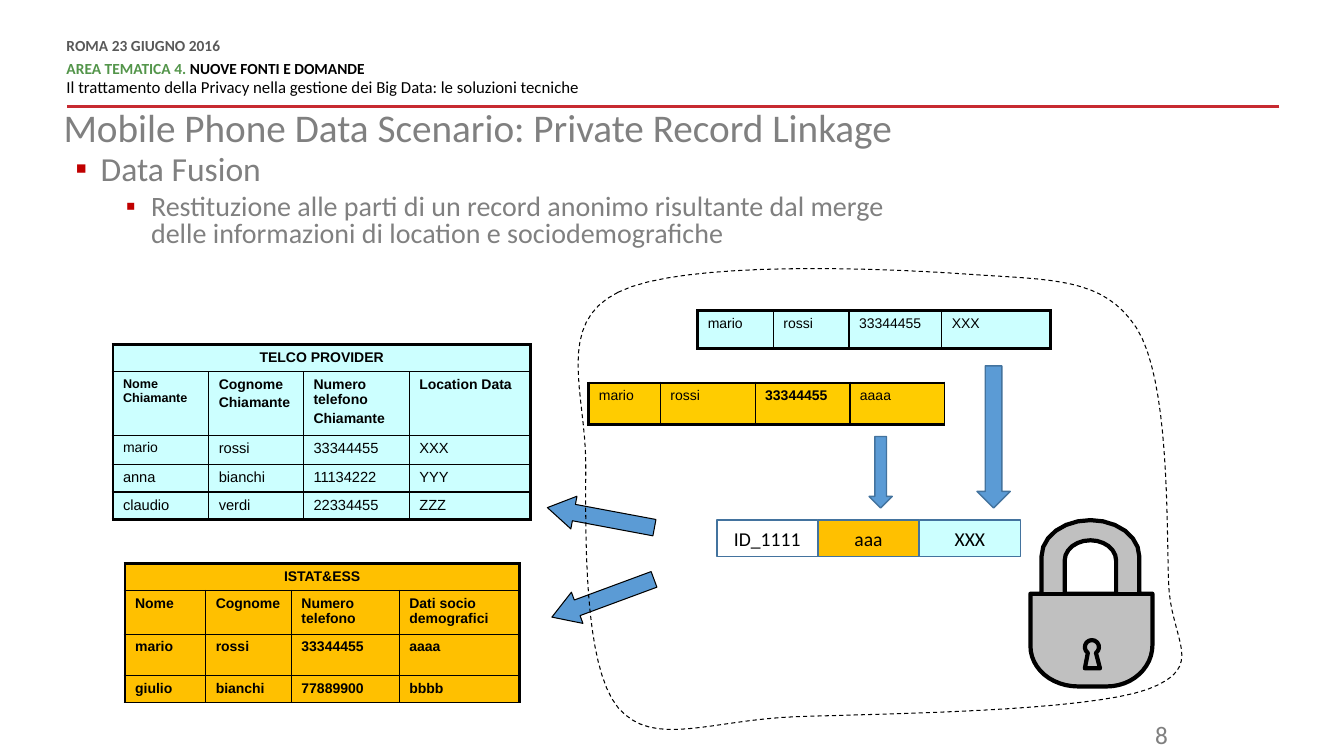
import math

from lxml import etree
from pptx import Presentation, util as u
from pptx.dml.color import RGBColor
from pptx.enum import dml, shapes, text
from pptx.oxml import ns

BLACK = RGBColor(0x00, 0x00, 0x00)
WHITE = RGBColor(0xFF, 0xFF, 0xFF)
DARK = RGBColor(0x59, 0x59, 0x59)
GREY = RGBColor(0x80, 0x80, 0x80)
PALE = RGBColor(0x7F, 0x7F, 0x7F)
STEEL = RGBColor(0xC0, 0xC0, 0xC0)
RED = RGBColor(0xC7, 0x2A, 0x31)
GREEN = RGBColor(0x53, 0x95, 0x4A)
BLUE = RGBColor(0x5B, 0x9B, 0xD5)
NAVY = RGBColor(0x43, 0x73, 0x9E)
CYAN = RGBColor(0xCC, 0xFF, 0xFF)
GOLD = RGBColor(0xFF, 0xC0, 0x00)
AMBER = RGBColor(0xFF, 0xCC, 0x00)
THICK, THIN = 2.25, 1
KIND = shapes.MSO_SHAPE


def grid(*vals):
    """Turn columns or rows, each a tenth of an inch, into lengths."""
    return [u.Inches(v / 10) for v in vals]


def write(par, words, size=10, color=BLACK, bold=False, font="Calibri",
          align=None, line=None, before=None, after=None):
    run = par.add_run()
    run.text = words
    run.font.name, run.font.size, run.font.bold = font, u.Pt(size), bold
    run.font.color.rgb = color
    for key, val in (("alignment", align), ("line_spacing", line),
                     ("space_before", before), ("space_after", after)):
        if val is not None:
            setattr(par, key, val)


def add_node(top, tag, **attrs):
    return etree.SubElement(top, ns.qn(tag), attrs)


def arc(mid, rad, start, stop, steps=12):
    """Points on an ellipse, angles in degrees, clockwise from the right."""
    turns = [math.radians(start + (stop - start) * i / steps) for i in range(steps + 1)]
    return [(mid[0] + rad[0] * math.cos(t), mid[1] + rad[1] * math.sin(t)) for t in turns]


def bezier(start, curves, steps=16):
    """Points along a chain of cubic curves."""
    pts = [start]
    for a, b, end in curves:
        first = pts[-1]
        for i in range(1, steps + 1):
            t = i / steps
            s = 1 - t
            pts.append(tuple(s**3 * p + 3 * s * s * t * q + 3 * s * t * t * r + t**3 * e
                             for p, q, r, e in zip(first, a, b, end)))
    return pts


class Board:
    """The current slide and its style."""

    def __init__(self, deck):
        self.slide = deck.slides.add_slide(deck.slide_layouts[5])
        self.items = self.slide.shapes

    def title(self, area, words):
        item = self.items.title
        item.left, item.top, item.width, item.height = grid(*area)
        frame = item.text_frame
        frame.auto_size = text.MSO_AUTO_SIZE.NONE
        frame.vertical_anchor = text.MSO_ANCHOR.TOP
        write(frame.paragraphs[0], words, size=28, color=GREY,
              align=text.PP_ALIGN.LEFT, line=0.9)

    def box(self, area, inset=None):
        frame = self.items.add_textbox(*grid(*area)).text_frame
        frame.word_wrap = True
        if inset is not None:
            frame.margin_left = frame.margin_right = inset
            frame.margin_top = frame.margin_bottom = inset
        return frame

    def bullet(self, par, words, left, **fmt):
        props = par._p.get_or_add_pPr()
        props.set("marL", str(u.Inches(left)))
        props.set("indent", str(u.Inches(-0.25)))
        add_node(add_node(props, "a:buClr"), "a:srgbClr", val="C00000")
        add_node(props, "a:buFont", typeface="Arial")
        add_node(props, "a:buChar", char="▪")
        write(par, words, color=GREY, line=0.8, **fmt)

    def paint(self, item, fill, line, width):
        item.shadow.inherit = False
        if fill is None:
            item.fill.background()
        else:
            item.fill.solid()
            item.fill.fore_color.rgb = fill
        item.line.color.rgb = line
        item.line.width = u.Pt(width)
        return item

    def shape(self, kind, area, fill=BLUE, line=NAVY, width=1, turn=0, words=None):
        item = self.paint(self.items.add_shape(kind, *grid(*area)), fill, line, width)
        item.rotation = turn
        if words:
            item.text_frame.vertical_anchor = text.MSO_ANCHOR.MIDDLE
            write(item.text_frame.paragraphs[0], words, size=14,
                  align=text.PP_ALIGN.CENTER)
        return item

    def outline(self, paths, fill=None, width=0.75):
        build = self.items.build_freeform(*grid(*paths[0][0]))
        for i, pts in enumerate(paths):
            if i:
                build.move_to(*grid(*pts[0]))
            build.add_line_segments([grid(*p) for p in pts[1:]], close=True)
        return self.paint(build.convert_to_shape(), fill, BLACK, width)

    def rule(self, ends, color, width):
        item = self.items.add_connector(shapes.MSO_CONNECTOR.STRAIGHT, *grid(*ends))
        item.line.color.rgb, item.line.width = color, u.Pt(width)
        add_node(item._element.spPr, "a:effectLst")

    def table(self, spot, cols, rows, fill, head=None, right=THICK, foot=THICK):
        """Rows hold a height, a format and cells; a cell may add its own format."""
        if head:
            top = dict(bold=True, align=text.PP_ALIGN.CENTER)
            rows = [(2.5, top, [head] + [""] * (len(cols) - 1))] + rows
        area = (*spot, sum(cols), sum(r[0] for r in rows))
        table = self.items.add_table(len(rows), len(cols), *grid(*area)).table
        table.first_row = table.horz_banding = False
        for col, wide in zip(table.columns, grid(*cols)):
            col.width = wide
        last, low = len(cols) - 1, len(rows) - 1
        for r, (high, fmt, cells) in enumerate(rows):
            table.rows[r].height = grid(high)[0]
            for c, words in enumerate(cells):
                cell = table.cell(r, c)
                wide = head and r == 0
                self.edges(cell, lnL=THIN if c else THICK,
                           lnR=right if c == last or wide else THIN,
                           lnT=THIN if r else THICK, lnB=foot if r == low else THIN)
                cell.fill.solid()
                cell.fill.fore_color.rgb = fill
                words, own = words if isinstance(words, tuple) else (words, {})
                frame = cell.text_frame
                for i, part in enumerate(words.split("\n") if words else []):
                    par = frame.add_paragraph() if i else frame.paragraphs[0]
                    write(par, part, font="Arial", before=u.Pt(2) if i else None,
                          **{**fmt, **own})
        if head:
            table.cell(0, 0).merge(table.cell(0, last))

    def edges(self, cell, **sides):
        props = cell._tc.get_or_add_tcPr()
        for side, width in sides.items():
            edge = add_node(props, "a:" + side, w=str(u.Pt(width)))
            add_node(add_node(edge, "a:solidFill"), "a:srgbClr", val=str(BLACK))


def main():
    deck = Presentation()
    deck.slide_width, deck.slide_height = u.Inches(13.33), u.Inches(7.5)
    board = Board(deck)

    # Header, title and page number
    board.rule((126.9, 10.6, 6.6, 10.6), RED, 2)
    frame = board.box((6.6, 3.9, 83.4, 5.9), inset=0)
    tight = u.Pt(10.8)
    write(frame.paragraphs[0], "ROMA 23 GIUGNO 2016", size=11, color=DARK, bold=True,
          line=tight, after=u.Pt(6))
    area = frame.add_paragraph()
    write(area, "AREA TEMATICA 4. ", size=11, color=GREEN, bold=True, line=tight)
    write(area, "NUOVE FONTI E DOMANDE", size=11, bold=True)
    write(frame.add_paragraph(), "Il trattamento della Privacy nella gestione dei Big Data: "
          "le soluzioni tecniche", size=12, line=tight, before=u.Pt(3), after=u.Pt(6))
    board.title((5.3, 10.3, 114.6, 12.5), "Mobile Phone Data Scenario: Private Record Linkage")
    write(board.box((108.9, 70.9, 7.9, 3.5)).paragraphs[0], "8", size=18, color=PALE,
          align=text.PP_ALIGN.RIGHT)

    # Bullets
    frame = board.box((6.5, 15, 86.7, 16.7))
    board.bullet(frame.paragraphs[0], "Data Fusion", 0.25, size=24)
    sub = frame.add_paragraph()
    sub.level = 1
    board.bullet(sub, "Restituzione alle parti di un record anonimo risultante dal merge delle "
                 "informazioni di location e sociodemografiche", 0.75, size=20, before=u.Pt(5))

    # Source tables
    bold, plain = dict(bold=True), dict(size=10.5)
    board.table((11.2, 34.2), (9.5, 9.4, 10.5, 12), [
        (6, bold, [("Nome Chiamante", dict(size=9)), "Cognome\nChiamante",
                   "Numero telefono\nChiamante", "Location Data"]),
        (2.9, plain, [("mario", dict(size=10)), "rossi", "33344455", "XXX"]),
        (2.6, plain, ["anna", "bianchi", "11134222", "YYY"]),
        (2.7, plain, ["claudio", "verdi", "22334455", "ZZZ"]),
    ], CYAN, head="TELCO PROVIDER")
    board.table((12.4, 55.9), (8, 8.5, 10.7, 11.9), [
        (4.2, bold, ["Nome", "Cognome", "Numero telefono", "Dati socio demografici"]),
        (4.1, bold, ["mario", "rossi", "33344455", "aaaa"]),
        (2.6, bold, ["giulio", "bianchi", "77889900", "bbbb"]),
    ], GOLD, head="ISTAT&ESS", foot=THIN)

    # Records to be linked
    board.table((69.2, 30.8), (7.5, 7.5, 9.2, 10.8),
                [(3.8, {}, ["mario", "rossi", "33344455", "XXX"])], CYAN)
    board.table((58.4, 38), (7.1, 9.4, 9.4, 9.4),
                [(4.1, {}, ["mario", "rossi", ("33344455", bold), "aaaa"])], AMBER, right=THIN)

    # Merged record
    merged = (("ID_1111", WHITE), ("aaa", GOLD), ("XXX", CYAN))
    for i, (words, fill) in enumerate(merged):
        board.shape(KIND.RECTANGLE, (71.1 + 10.05 * i, 51.6, 10, 3.6), fill, words=words)

    # Arrows
    board.shape(KIND.DOWN_ARROW, (96.9, 36.3, 3.3, 14.1))
    board.shape(KIND.DOWN_ARROW, (86.2, 43.3, 2.3, 7.1))
    for left, top, turn in ((54.4, 57.7, 159.7), (54.2, 49.7, 190.6)):
        arrow = board.shape(KIND.RIGHT_ARROW, (left, top, 10.8, 3.3), line=BLACK,
                            width=0.75, turn=turn)
        arrow.adjustments[1] = 0.81

    # Dashed safe area
    cloud = bezier((61.3, 29), [
        ((67.6, 25.8), (87.4, 26.6), (95.9, 27.2)),
        ((104.5, 27.8), (109.4, 27.5), (112.7, 32.5)),
        ((116, 37.6), (115.7, 51.7), (115.9, 57.6)),
        ((116, 63.6), (119.9, 66.1), (113.8, 68.4)),
        ((107.6, 70.6), (87.9, 70.8), (79.1, 71.1)),
        ((70.4, 71.4), (64.8, 74.3), (61.3, 70.2)),
        ((57.8, 66), (58.1, 52.8), (58.1, 46)),
        ((58.1, 39.1), (55, 32.1), (61.3, 29))])
    board.outline([cloud]).line.dash_style = dml.MSO_LINE.DASH

    # Padlock: body with shackle, its window, the top edge and the keyhole
    body = [(102.2, 58.9), (103.3, 58.9), *arc((108.15, 55.2), (4.85, 3.6), 180, 360),
            (113, 58.9), (114.3, 58.9), *arc((109.8, 64), (4.5, 4.1), 0, 90),
            *arc((106.9, 64.1), (4.7, 4), 90, 180)]
    window = [(105.6, 58.9), *arc((108.15, 55.6), (2.55, 2), 180, 360), (110.7, 58.9)]
    board.outline([body, window], STEEL, 3)
    board.rule((102.2, 58.9, 114.3, 58.9), BLACK, 3)
    keyhole = [*arc((108.3, 64.2), (0.7, 0.7), 125, 415), (109.1, 66.3), (107.6, 66.3)]
    board.outline([keyhole], STEEL, 3)

    deck.save("out.pptx")


if __name__ == "__main__":
    main()
